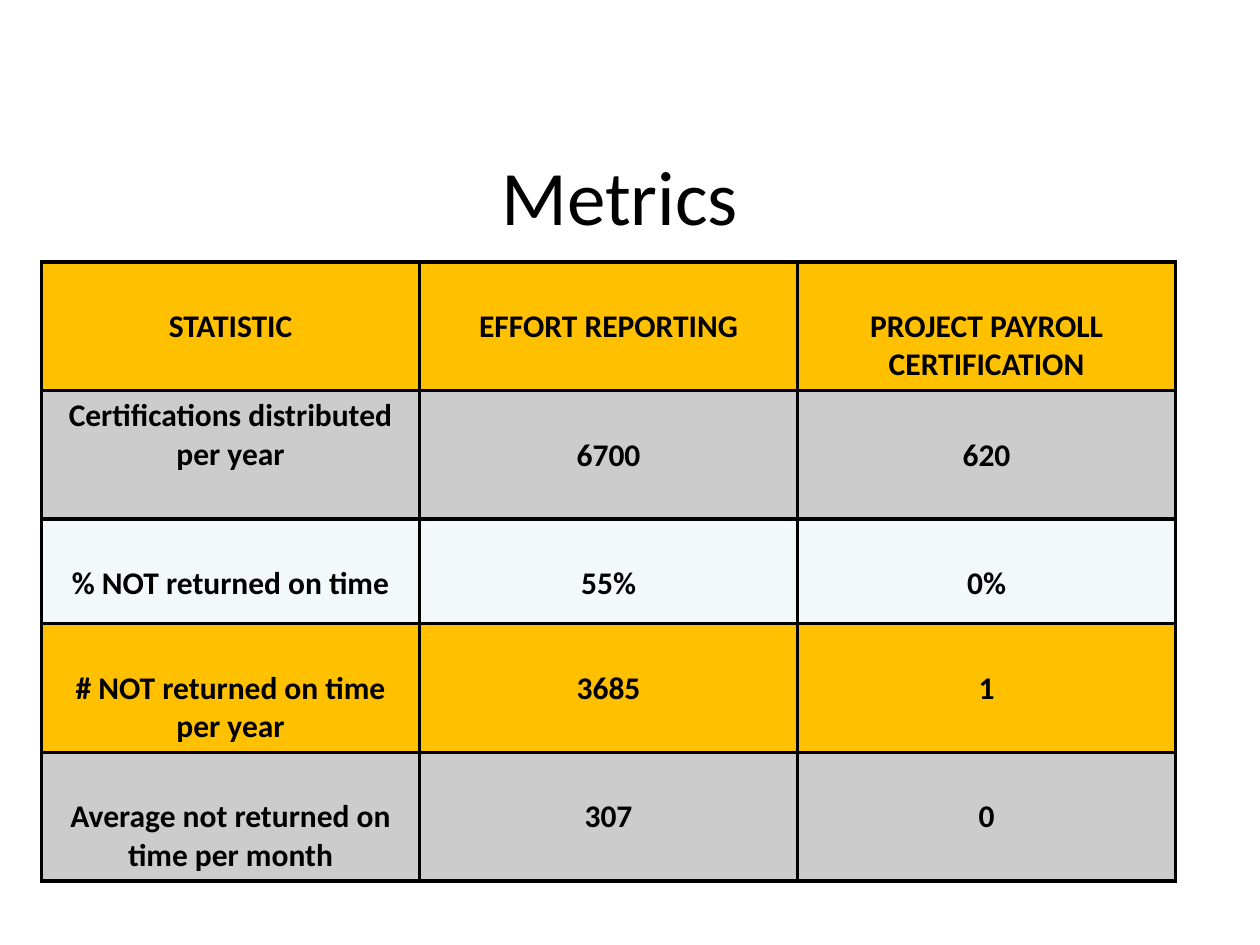
from typing import NamedTuple

from lxml.etree import SubElement
from pptx import Presentation
from pptx.dml.color import RGBColor
from pptx.enum.text import MSO_ANCHOR, PP_ALIGN
from pptx.oxml.ns import qn
from pptx.util import Inches, Pt

BLACK = RGBColor(0x00, 0x00, 0x00)
GOLD = RGBColor(0xFF, 0xC0, 0x00)
GREY = RGBColor(0xCC, 0xCC, 0xCC)
PALE = RGBColor(0xF3, 0xF9, 0xFA)
FONT = "Calibri"
COL_W = 3
ONE_LINE, TWO_LINES = 0.83, 1.02
TOP_EDGE, SECOND_LINE = 0.05, 0.36  # top margins inside a cell


class MetricRow(NamedTuple):
    texts: tuple[str, str, str]
    fill: RGBColor
    height: float = TWO_LINES
    label_top: float = SECOND_LINE


ROWS = [
    MetricRow(("STATISTIC", "EFFORT REPORTING", "PROJECT PAYROLL CERTIFICATION"), GOLD),
    MetricRow(("Certifications distributed per year", "6700", "620"), GREY,
              label_top=TOP_EDGE),
    MetricRow(("% NOT returned on time", "55%", "0%"), PALE, height=ONE_LINE),
    MetricRow(("# NOT returned on time per year", "3685", "1"), GOLD),
    MetricRow(("Average not returned on time per month", "307", "0"), GREY),
]


def add_text(tf, text: str, size: float, bold: bool = False) -> None:
    p = tf.paragraphs[0]
    p.alignment = PP_ALIGN.CENTER
    r = p.add_run()
    r.text = text
    r.font.name, r.font.size, r.font.bold = FONT, Pt(size), bold
    r.font.color.rgb = BLACK


def add_borders(cell, color: RGBColor, width: float) -> None:
    """Line all four sides; the lines must come before the fill in tcPr."""
    tcPr = cell._tc.get_or_add_tcPr()
    for side in ("a:lnL", "a:lnR", "a:lnT", "a:lnB"):
        ln = SubElement(tcPr, qn(side), w=str(Pt(width)))
        fill = SubElement(ln, qn("a:solidFill"))
        SubElement(fill, qn("a:srgbClr"), val=str(color))


def add_metrics_table(s, rows: list[MetricRow], left: float, top: float) -> None:
    n_cols = len(rows[0].texts)
    height = sum(row.height for row in rows)
    table = s.shapes.add_table(len(rows), n_cols, Inches(left), Inches(top),
                               Inches(COL_W * n_cols), Inches(height)).table
    for column in table.columns:
        column.width = Inches(COL_W)
    for i, row in enumerate(rows):
        table.rows[i].height = Inches(row.height)
        for j, text in enumerate(row.texts):
            cell = table.cell(i, j)
            cell.margin_top = Inches(row.label_top if j == 0 else SECOND_LINE)
            add_borders(cell, BLACK, 2.25)
            cell.fill.solid()
            cell.fill.fore_color.rgb = row.fill
            add_text(cell.text_frame, text, 18, bold=True)


def main() -> None:
    prs = Presentation()
    prs.slide_width, prs.slide_height = Inches(10), Inches(7.5)
    s = prs.slides.add_slide(prs.slide_layouts[5])
    title = s.shapes.title
    title.left, title.top = Inches(0.42), Inches(0.92)
    title.width, title.height = Inches(9), Inches(1.25)
    title.text_frame.vertical_anchor = MSO_ANCHOR.MIDDLE
    add_text(title.text_frame, "Metrics", 44)
    add_metrics_table(s, ROWS, left=0.33, top=2.08)
    prs.save("out.pptx")


if __name__ == "__main__":
    main()
